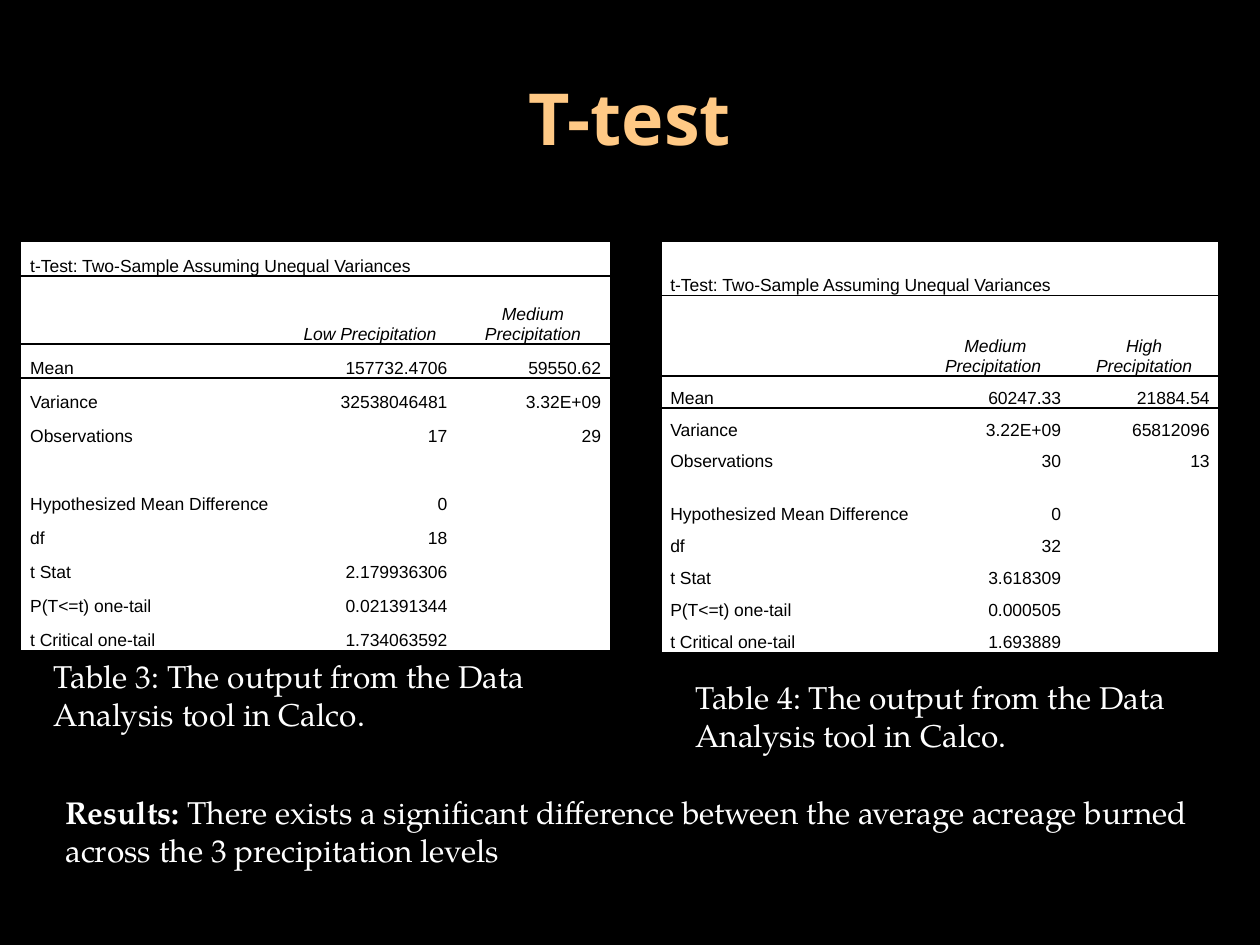
from dataclasses import dataclass

from lxml import etree
from pptx import Presentation
from pptx.dml.color import RGBColor
from pptx.enum.text import MSO_ANCHOR, PP_ALIGN
from pptx.oxml.ns import qn
from pptx.util import Inches, Pt

LEFT, MID, RIGHT, JUST = PP_ALIGN.LEFT, PP_ALIGN.CENTER, PP_ALIGN.RIGHT, PP_ALIGN.JUSTIFY
TOP, CENTER, BOTTOM = MSO_ANCHOR.TOP, MSO_ANCHOR.MIDDLE, MSO_ANCHOR.BOTTOM
WIDE, HIGH = Inches(10), Inches(7.5)
BLACK, WHITE, GOLD = "000000", "FFFFFF", "FFC985"
SANS, SERIF, HEAD = "Arial", "TeX Gyre Pagella", "Noto Sans"
PLAIN = "{2D5ABB26-0587-4C30-8999-92F81FD0307C}"  # table style without lines
LABELS = ["Mean", "Variance", "Observations", "Hypothesized Mean Difference",
          "df", "t Stat", "P(T<=t) one-tail", "t Critical one-tail"]


@dataclass
class Box:
    """Place on the slide, in shares of its width and height."""
    x: float
    y: float
    w: float
    h: float

    def place(self) -> tuple[int, int, int, int]:
        return (int(self.x * WIDE), int(self.y * HIGH),
                int(self.w * WIDE), int(self.h * HIGH))


@dataclass
class Test:
    """One t-test table: row heights are a title, a head, a gap and a base row."""
    box: Box
    cols: list[float]
    title: float
    head: float
    gap: float
    base: float
    names: list[str]
    first: list[str]
    second: list[str]


def color(code: str) -> RGBColor:
    return RGBColor.from_string(code)


def write(frame, text: str, *, lead: str = "", size: float = 18, font: str = SERIF,
          ink: str = WHITE, bold: bool = False, italic: bool = False,
          align=LEFT, after: float = 0) -> None:
    """Write one paragraph, with an optional bold lead."""
    para = frame.paragraphs[0]
    para.alignment = align
    para.space_after = Pt(after)
    for part, heavy in ((lead, True), (text, bold)):
        if part:
            run = para.add_run()
            run.text = part
            run.font.size, run.font.name = Pt(size), font
            run.font.bold, run.font.italic = heavy, italic
            run.font.color.rgb = color(ink)
    if not text:  # keeps an empty cell as low as its row
        etree.SubElement(para._p, qn("a:endParaRPr"), sz=str(int(size * 100)))


def add_text(slide, box: Box, text: str, anchor=TOP, **style) -> None:
    frame = slide.shapes.add_textbox(*box.place()).text_frame
    frame.word_wrap = True
    frame.vertical_anchor = anchor
    write(frame, text, **style)


def rule(cell, side: str) -> None:
    """Draw a black line on one side of a cell."""
    line = etree.Element(qn("a:" + side), w=str(Pt(1)))
    fill = etree.SubElement(line, qn("a:solidFill"))
    etree.SubElement(fill, qn("a:srgbClr"), val=BLACK)
    cell._tc.get_or_add_tcPr().insert(0, line)


def add_test(slide, test: Test) -> None:
    rows = [["t-Test: Two-Sample Assuming Unequal Variances", "", ""], ["", *test.names]]
    seconds = test.second + [""] * (len(LABELS) - len(test.second))
    rows += [list(row) for row in zip(LABELS, test.first, seconds)]
    table = slide.shapes.add_table(len(rows), 3, *test.box.place()).table
    table.first_row = table.horz_banding = False
    table._tbl.tblPr.find(qn("a:tableStyleId")).text = PLAIN
    for col, share in zip(table.columns, test.cols):
        col.width = int(share * WIDE)
    special = {0: test.title, 1: test.head, 5: test.gap}
    for r, row in enumerate(rows):
        table.rows[r].height = int(special.get(r, test.base) * HIGH)
        for c, text in enumerate(row):
            cell = table.cell(r, c)
            cell.fill.solid()
            cell.fill.fore_color.rgb = color(WHITE)
            cell.vertical_anchor = BOTTOM
            cell.margin_left = cell.margin_right = Inches(0.07)
            cell.margin_top = cell.margin_bottom = 0
            align = MID if r == 1 else RIGHT if c else JUST
            write(cell.text_frame, text, size=10, font=SANS, ink=BLACK,
                  italic=r == 1, align=align, after=4)
            if r < 2:
                rule(cell, "lnB")
            if r in (1, 2):
                rule(cell, "lnT")
    table.cell(0, 0).merge(table.cell(0, 2))


TESTS = [
    Test(Box(0.017, 0.256, 0.467, 0.433), [0.212, 0.133, 0.122],
         0.036, 0.072, 0.072, 0.036, ["Low Precipitation ", "Medium Precipitation"],
         ["157732.4706", "32538046481", "17", "0", "18",
          "2.179936306", "0.021391344", "1.734063592"],
         ["59550.62", "3.32E+09", "29"]),
    Test(Box(0.525, 0.256, 0.442, 0.433), [0.206, 0.118, 0.118],
         0.057, 0.085, 0.056, 0.0338, ["Medium Precipitation ", "High Precipitation"],
         ["60247.33", "3.22E+09", "30", "0", "32", "3.618309", "0.000505", "1.693889"],
         ["21884.54", "65812096", "13"]),
]
NOTES = [Box(0.033, 0.689, 0.433, 0.095), Box(0.542, 0.711, 0.458, 0.095)]


def main() -> None:
    deck = Presentation()
    deck.slide_width, deck.slide_height = WIDE, HIGH
    slide = deck.slides.add_slide(deck.slide_layouts[6])
    slide.background.fill.solid()
    slide.background.fill.fore_color.rgb = color(BLACK)

    # Title
    add_text(slide, Box(0.05, 0.04, 0.9, 0.167), "T-test", CENTER,
             size=41, font=HEAD, ink=GOLD, bold=True, align=MID)

    # Tables with their captions
    for count, (test, note) in enumerate(zip(TESTS, NOTES), 3):
        add_test(slide, test)
        add_text(slide, note, f"Table {count}: The output from the Data Analysis tool in Calco.")

    # Conclusion
    add_text(slide, Box(0.042, 0.833, 0.917, 0.095),
             "There exists a significant difference between the average acreage "
             "burned across the 3 precipitation levels", lead="Results: ")
    deck.save("out.pptx")


if __name__ == "__main__":
    main()
